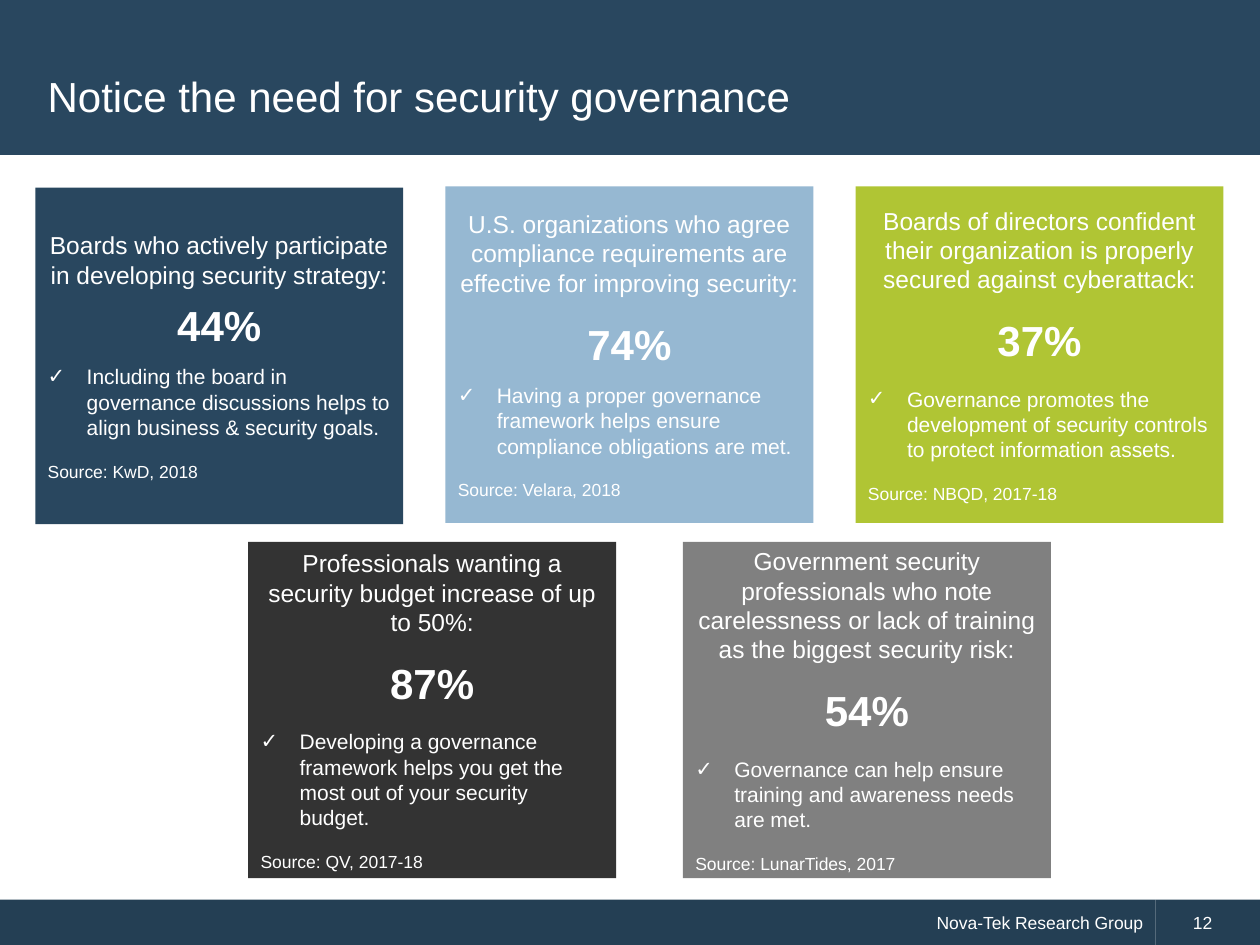
from dataclasses import dataclass

from lxml.etree import SubElement
from pptx import Presentation
from pptx.dml.color import RGBColor
from pptx.enum.shapes import MSO_SHAPE
from pptx.enum.text import MSO_ANCHOR, PP_ALIGN
from pptx.oxml.ns import qn
from pptx.shapes.autoshape import Shape
from pptx.slide import Slide
from pptx.text.text import TextFrame
from pptx.util import Inches, Pt

WHITE = "FFFFFF"
NAVY = "29475F"
FOOTER_BLUE = "243F54"
CARD_WIDTH, CARD_HEIGHT = 2.92, 2.67
TOP_ROW, BOTTOM_ROW = 1.48, 4.3
TOP_LEFT, TOP_STEP = 0.28, 3.255
BOTTOM_LEFT, BOTTOM_STEP = 1.97, 3.45


@dataclass
class TextLine:
    text: str
    size: float
    bold: bool = False
    alignment: PP_ALIGN = PP_ALIGN.LEFT
    space_after: float = 0
    margin: float = 0
    indent: float = 0
    bullet: str = ""


@dataclass
class Card:
    left: float
    top: float
    color: str
    heading: str
    figure: str
    benefit: str
    source: str
    heading_gap: float = 12
    figure_gap: float = 12
    source_gap: float = 12

    def lines(self) -> list[TextLine]:
        return [
            TextLine(self.heading, 14, False, PP_ALIGN.CENTER, self.heading_gap),
            TextLine(self.figure, 24, True, PP_ALIGN.CENTER, self.figure_gap),
            TextLine(self.benefit, 12, space_after=12, margin=0.31, indent=-0.31, bullet="✓"),
            TextLine(f"Source: {self.source}", 10, space_after=self.source_gap),
        ]


def rgb(color: str) -> RGBColor:
    return RGBColor.from_string(color)


def write_lines(frame: TextFrame, lines: list[TextLine]) -> None:
    frame.word_wrap = True
    frame.vertical_anchor = MSO_ANCHOR.MIDDLE
    for index, line in enumerate(lines):
        paragraph = frame.add_paragraph() if index else frame.paragraphs[0]
        paragraph.alignment = line.alignment
        paragraph.space_after = Pt(line.space_after)
        run = paragraph.add_run()
        run.text = line.text
        formats = {"name": "Arial", "size": Pt(line.size), "bold": line.bold}
        for attribute, value in formats.items():
            setattr(run.font, attribute, value)
        run.font.color.rgb = rgb(WHITE)
        properties = paragraph._p.get_or_add_pPr()
        properties.set("marL", str(Inches(line.margin)))
        properties.set("indent", str(Inches(line.indent)))
        if line.bullet:
            SubElement(properties, qn("a:buFont")).set("typeface", "Arial")
            SubElement(properties, qn("a:buChar")).set("char", line.bullet)


def add_panel(slide: Slide, left: float, top: float, width: float, height: float,
              color: str, lines: list[TextLine]) -> Shape:
    shape = slide.shapes.add_shape(
        MSO_SHAPE.RECTANGLE, Inches(left), Inches(top), Inches(width), Inches(height))
    shape.shadow.inherit = False
    shape.fill.solid()
    shape.fill.fore_color.rgb = rgb(color)
    shape.line.fill.background()
    write_lines(shape.text_frame, lines)
    return shape


def add_title(slide: Slide, text: str) -> None:
    title = slide.shapes.add_textbox(Inches(0.28), Inches(0.28), Inches(9.43), Inches(0.96))
    write_lines(title.text_frame, [TextLine(text, 24)])


CARDS = [
    Card(TOP_LEFT, TOP_ROW + 0.01, NAVY,
         "Boards who actively participate in developing security strategy:", "44%",
         "Including the board in governance discussions helps to align business & security goals.",
         "KwD, 2018", heading_gap=6, figure_gap=8),
    Card(TOP_LEFT + TOP_STEP, TOP_ROW, "96B8D2",
         "U.S. organizations who agree compliance requirements are effective for improving security:",
         "74%",
         "Having a proper governance framework helps ensure compliance obligations are met.",
         "Velara, 2018", figure_gap=8),
    Card(TOP_LEFT + 2 * TOP_STEP, TOP_ROW, "B0C534",
         "Boards of directors confident their organization is properly secured against cyberattack:",
         "37%",
         "Governance promotes the development of security controls to protect information assets.",
         "NBQD, 2017-18"),
    Card(BOTTOM_LEFT, BOTTOM_ROW, "333333",
         "Professionals wanting a security budget increase of up to 50%:", "87%",
         "Developing a governance framework helps you get the most out of your security budget.",
         "QV, 2017-18", source_gap=0),
    Card(BOTTOM_LEFT + BOTTOM_STEP, BOTTOM_ROW, "808080",
         "Government security professionals who note carelessness or lack of training "
         "as the biggest security risk:", "54%",
         "Governance can help ensure training and awareness needs are met.",
         "LunarTides, 2017"),
]


def main() -> None:
    presentation = Presentation()
    presentation.slide_width = Inches(10)
    presentation.slide_height = Inches(7.5)
    slide = presentation.slides.add_slide(presentation.slide_layouts[6])

    footer = TextLine("Nova-Tek Research Group", 10, alignment=PP_ALIGN.RIGHT, margin=0.29)
    add_panel(slide, 0, 7.14, 9.17, 0.37, FOOTER_BLUE, [footer])
    add_panel(slide, 9.17, 7.14, 0.83, 0.37, FOOTER_BLUE, [TextLine("12", 10, margin=0.2)])
    add_panel(slide, 0, 0, 10, 1.23, NAVY, [])
    add_title(slide, "Notice the need for security governance")
    for card in CARDS:
        add_panel(slide, card.left, card.top, CARD_WIDTH, CARD_HEIGHT, card.color, card.lines())

    presentation.save("out.pptx")


if __name__ == "__main__":
    main()
